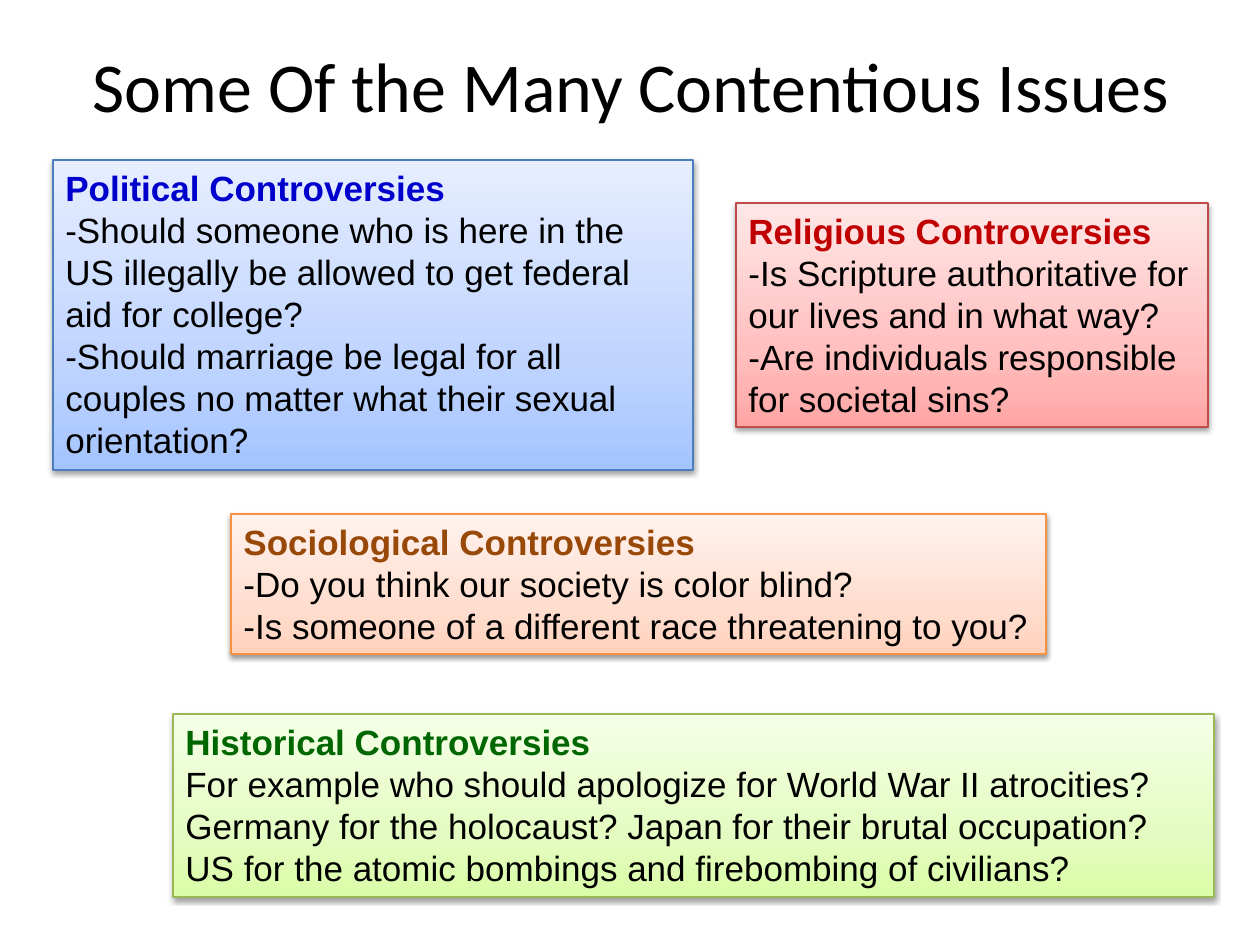
from copy import deepcopy
from dataclasses import dataclass

from lxml import etree
from pptx import Presentation
from pptx import util as u
from pptx.dml.color import RGBColor
from pptx.enum import text
from pptx.oxml import ns

PX_PER_INCH = 126


@dataclass(frozen=True)
class Theme:
    title_font: str = "Calibri"
    body_font: str = "Arial"
    title_size: int = 40
    body_size: int = 20
    line_width: float = 0.75
    ink: str = "000000"


@dataclass(frozen=True)
class Palette:
    heading: str
    line: str
    gradient: tuple  # bottom, middle, top


THEME = Theme()
BLUE = Palette("0000CC", "4B7EBC", ("A4C4FF", "BFD4FF", "E6EEFF"))
RED = Palette("C00000", "BF4C48", ("FFA6A5", "FFC0BF", "FFE7E7"))
GREEN = Palette("006600", "98B955", ("DAFDA7", "E4FCC2", "F5FFE7"))
ORANGE = Palette("984807", "F69240", ("FFD2BD", "FFDED0", "FFF2ED"))
GRADIENT_POSITIONS = (0, 0.35, 1)


def px(length):
    return u.Emu(round(length * u.Inches(1) / PX_PER_INCH))


def add_run(paragraph, words, font, size, color, bold=False):
    run = paragraph.add_run()
    run.text = words
    run.font.name = font
    run.font.size = u.Pt(size)
    run.font.bold = bold
    run.font.color.rgb = RGBColor.from_string(color)


def fill_gradient(shape, colors):
    """Three-stop gradient that runs from the bottom edge to the top."""
    fill = shape.fill
    fill.gradient()
    fill.gradient_angle = 90
    first_stop = shape.element.spPr.find(".//" + ns.qn("a:gs"))
    first_stop.addnext(deepcopy(first_stop))
    for stop, position, color in zip(fill.gradient_stops, GRADIENT_POSITIONS, colors):
        stop.position = position
        stop.color.rgb = RGBColor.from_string(color)


def add_shadow(shape):
    """Soft shadow straight below the shape."""
    effects = etree.SubElement(shape.element.spPr, ns.qn("a:effectLst"))
    shadow = etree.SubElement(effects, ns.qn("a:outerShdw"), blurRad="40000",
                              dist="20000", dir="5400000", rotWithShape="0")
    color = etree.SubElement(shadow, ns.qn("a:srgbClr"), val=THEME.ink)
    etree.SubElement(color, ns.qn("a:alpha"), val="38000")


def place_title(slide, box, words):
    title = slide.shapes.title
    title.left, title.top, title.width, title.height = map(px, box)
    frame = title.text_frame
    frame.vertical_anchor = text.MSO_ANCHOR.MIDDLE
    paragraph = frame.paragraphs[0]
    paragraph.alignment = text.PP_ALIGN.CENTER
    add_run(paragraph, words, THEME.title_font, THEME.title_size, THEME.ink)


def place_issue(slide, box, palette, heading, items, joined=False, wrap=True):
    """Coloured panel; joined keeps the first item in the heading's paragraph."""
    shape = slide.shapes.add_textbox(*map(px, box))
    fill_gradient(shape, palette.gradient)
    shape.line.color.rgb = RGBColor.from_string(palette.line)
    shape.line.width = u.Pt(THEME.line_width)
    add_shadow(shape)

    frame = shape.text_frame
    frame.word_wrap = wrap
    frame.auto_size = text.MSO_AUTO_SIZE.SHAPE_TO_FIT_TEXT
    paragraph = frame.paragraphs[0]
    add_run(paragraph, heading, THEME.body_font, THEME.body_size, palette.heading, True)
    for index, item in enumerate(items):
        if joined and index == 0:
            paragraph.add_line_break()
        else:
            paragraph = frame.add_paragraph()
        add_run(paragraph, item, THEME.body_font, THEME.body_size, THEME.ink)


def main():
    presentation = Presentation()
    presentation.slide_width, presentation.slide_height = px(1260), px(945)
    slide = presentation.slides.add_slide(presentation.slide_layouts[5])

    place_title(slide, (55, 32, 1152, 105), "Some Of the Many Contentious Issues")

    # Upper row
    place_issue(slide, (53, 160, 640, 310), BLUE, "Political Controversies", [
        "-Should someone who is here in the US illegally be allowed to get "
        "federal aid for college?",
        "-Should marriage be legal for all couples no matter what their "
        "sexual orientation?",
    ], joined=True)
    place_issue(slide, (736, 203, 472, 224), RED, "Religious Controversies", [
        "-Is Scripture authoritative for our lives and in what way?",
        "-Are individuals responsible for societal sins?",
    ])

    # Lower panels
    place_issue(slide, (173, 714, 1041, 183), GREEN, "Historical Controversies", [
        "For example who should apologize for World War II atrocities? "
        "Germany for the holocaust? Japan for their brutal occupation? "
        "US for the atomic bombings and firebombing of civilians?",
    ])
    place_issue(slide, (231, 514, 815, 140), ORANGE, "Sociological Controversies", [
        "-Do you think our society is color blind?",
        "-Is someone of a different race threatening to you?",
    ], joined=True, wrap=False)

    presentation.save("out.pptx")


if __name__ == "__main__":
    main()
